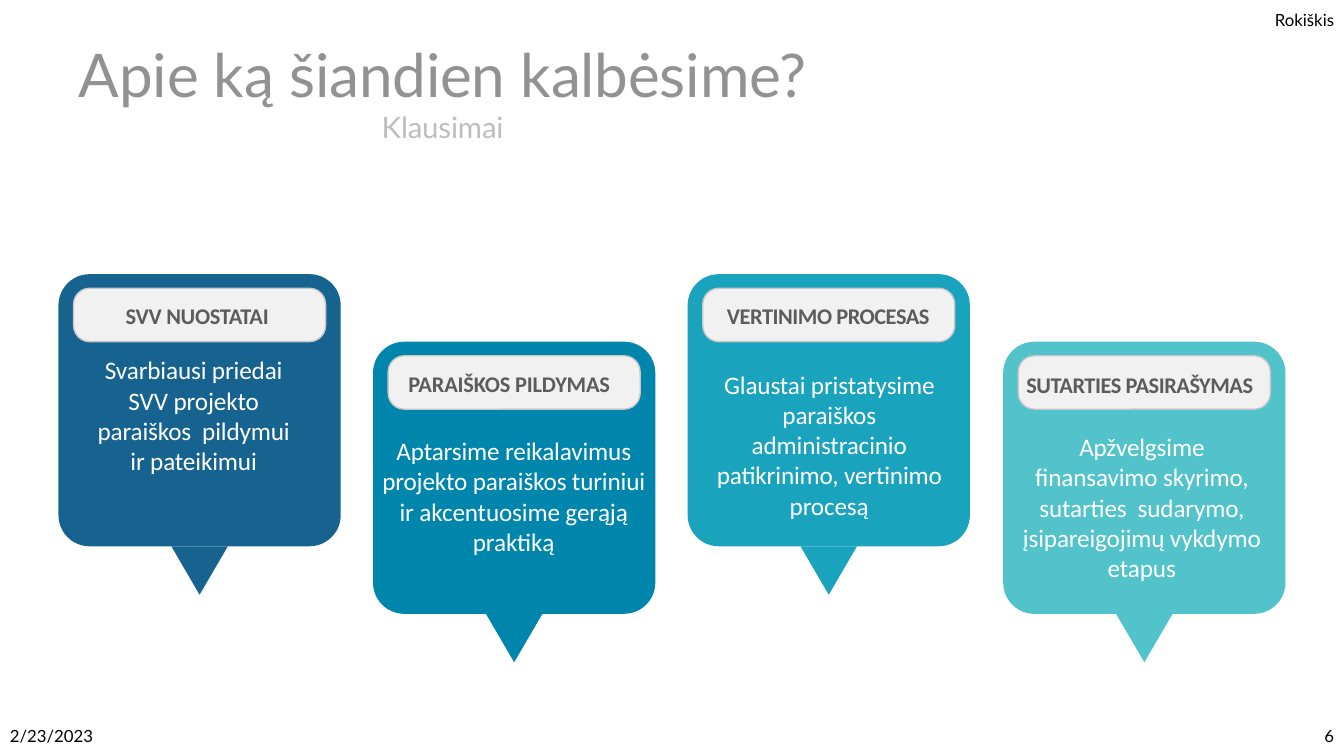
from pptx import Presentation
from pptx.dml.color import RGBColor
from pptx.enum.shapes import MSO_SHAPE as Shape
from pptx.enum.text import MSO_ANCHOR as Anchor, MSO_AUTO_SIZE as AutoSize, PP_ALIGN as Align
from pptx.util import Emu, Pt

EMU_PER_PX = 9144
CARD_WIDTH, CARD_HEIGHT = 280, 270
CARD_LEFT, CARD_SPAN, CARD_TOP, CARD_DROP = 58, 937, 272, 67

CARDS = [
    ("176390", "SVV NUOSTATAI", (31, 26, 211, 29), Align.CENTER, -0.2,
     "Svarbiausi priedai SVV projekto paraiškos  pildymui ir pateikimui",
     (31, 79, 205, 123)),
    ("0086AC", "PARAIŠKOS PILDYMAS", (33, 26, 213, 29), Align.LEFT, -0.1,
     "Aptarsime reikalavimus projekto paraiškos turiniui ir akcentuosime gerąją praktiką",
     (8, 92, 262, 121)),
    ("1AA3BD", "VERTINIMO PROCESAS", (37, 26, 207, 29), Align.LEFT, -0.3,
     "Glaustai pristatysime paraiškos administracinio patikrinimo, vertinimo procesą",
     (15, 93, 250, 185)),
    ("52C3CA", "SUTARTIES PASIRAŠYMAS", (21, 27, 237, 29), Align.LEFT, -0.3,
     "Apžvelgsime finansavimo skyrimo, sutarties  sudarymo, įsipareigojimų vykdymo etapus",
     (15, 88, 244, 153)),
]


def px(length):
    return Emu(length * EMU_PER_PX)


def color(value):
    return RGBColor.from_string(value)


def set_insets(text_frame, left, top, right, bottom):
    text_frame.margin_left, text_frame.margin_top = px(left), px(top)
    text_frame.margin_right, text_frame.margin_bottom = px(right), px(bottom)


def format_paragraph(paragraph, font_name, size, fill, align, bold=False, spacing=0):
    paragraph.alignment = align
    for run in paragraph.runs:
        run.font.name = font_name
        run.font.size = Pt(size)
        run.font.bold = bold
        run.font.color.rgb = color(fill)
        if spacing:
            run._r.get_or_add_rPr().set("spc", str(round(spacing * 100)))


def add_text(slide, box, text, insets, anchor=Anchor.TOP, space_before=0, **style):
    text_frame = slide.shapes.add_textbox(*map(px, box)).text_frame
    text_frame.word_wrap = True
    text_frame.vertical_anchor = anchor
    set_insets(text_frame, *insets)
    text_frame.text = text
    paragraph = text_frame.paragraphs[0]
    paragraph.space_before = Pt(space_before)
    format_paragraph(paragraph, **style)


def add_filled(slide, kind, box, fill, line=None, radius=None):
    shape = slide.shapes.add_shape(kind, *map(px, box))
    shape.shadow.inherit = False
    shape.fill.solid()
    shape.fill.fore_color.rgb = color(fill)
    if line:
        shape.line.color.rgb = color(line)
        shape.line.width = Pt(0.96)
    else:
        shape.line.fill.background()
    if radius:
        shape.adjustments[0] = radius / min(box[2:])


def add_title(slide, box):
    title = slide.shapes.title
    title.left, title.top, title.width, title.height = map(px, box)
    text_frame = title.text_frame
    text_frame.word_wrap = True
    text_frame.auto_size = AutoSize.NONE
    text_frame.vertical_anchor = Anchor.BOTTOM
    set_insets(text_frame, 2, 2, 0, 0)
    text_frame.text = "Apie ką šiandien kalbėsime?\nKlausimai"
    styles = [(43, "929292", 50.5, 1.4, -0.1), (21, "BEBEBE", 24.9, 0, -0.1)]
    for paragraph, (size, fill, line_height, before, spacing) in zip(text_frame.paragraphs, styles):
        paragraph.line_spacing = Pt(line_height)
        paragraph.space_before = Pt(before)
        format_paragraph(paragraph, "Lato", size, fill, Align.CENTER, spacing=spacing)


def add_card(slide, box, fill, heading, heading_box, heading_align, spacing, body, body_box):
    left, top, width, height = box

    def inside(part):
        return (left + part[0], top + part[1], *part[2:])

    add_filled(slide, Shape.ROUNDED_RECTANGLE, box, fill, radius=31)
    add_filled(slide, Shape.FLOWCHART_MERGE, inside((width // 2 - 28, height, 56, 48)), fill)
    add_filled(slide, Shape.ROUNDED_RECTANGLE, inside((15, 14, width - 30, 53)),
               "F1F1F1", line="C8C8C8", radius=16)
    add_text(slide, inside(heading_box), heading, (2, 2, 0, 0), space_before=1.3,
             font_name="Calibri", size=16, fill="5C5C5C", align=heading_align,
             bold=True, spacing=spacing)
    add_text(slide, inside(body_box), body, (1, 1, 0, 0), space_before=1,
             font_name="Calibri", size=18, fill="FFFFFF", align=Align.CENTER, spacing=-0.1)


def add_margin_texts(slide, width, height):
    margin_texts = [
        ("Rokiškis", (width - 242, 5, 242, 30), Anchor.TOP, Align.RIGHT),
        ("2/23/2023", (0, height - 40, 300, 40), Anchor.MIDDLE, Align.LEFT),
        ("6", (width - 300, height - 40, 300, 40), Anchor.MIDDLE, Align.RIGHT),
    ]
    for text, box, anchor, align in margin_texts:
        add_text(slide, box, text, (10, 5, 10, 5), anchor,
                 font_name="Lato", size=12, fill="000000", align=align)


def main():
    presentation = Presentation()
    width, height = 1333, 750
    presentation.slide_width, presentation.slide_height = px(width), px(height)
    slide = presentation.slides.add_slide(presentation.slide_layouts[5])
    add_margin_texts(slide, width, height)
    add_title(slide, (54, 34, 768, 109))
    for index, card in enumerate(CARDS):
        left = CARD_LEFT + index * CARD_SPAN // (len(CARDS) - 1)
        top = CARD_TOP + index % 2 * CARD_DROP
        add_card(slide, (left, top, CARD_WIDTH, CARD_HEIGHT), *card)
    presentation.save("out.pptx")


if __name__ == "__main__":
    main()
